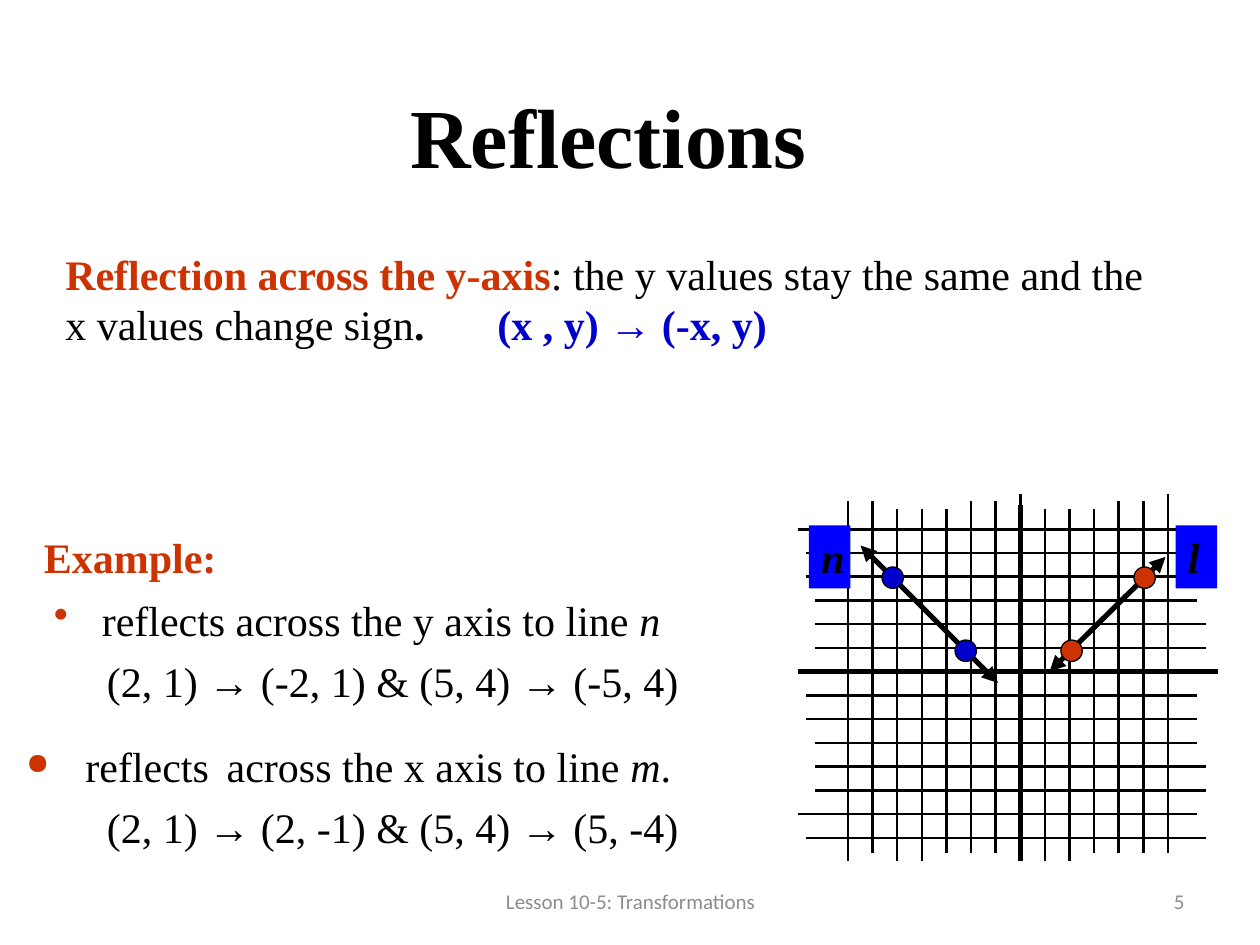
from dataclasses import dataclass

import pptx
import pptx.dml.color
import pptx.enum.shapes
import pptx.enum.text
import pptx.oxml
import pptx.oxml.ns
import pptx.util
from pptx.util import Inches


@dataclass(frozen=True)
class Theme:
    black: str = "000000"
    red: str = "CC3300"
    navy: str = "0000CC"
    blue: str = "0000FF"
    grey: str = "8C8C8C"
    serif: str = "Times New Roman"
    sans: str = "Calibri"
    title: int = 48
    body: int = 24
    gap: int = 18
    footer: int = 12


theme = Theme()
color = pptx.dml.color.RGBColor.from_string
qn = pptx.oxml.ns.qn
align = pptx.enum.text.PP_ALIGN
anchor = pptx.enum.text.MSO_ANCHOR
kinds = pptx.enum.shapes.MSO_SHAPE


def add_span(para, text, ink=theme.black, size=theme.body, font=theme.serif, bold=False, italic=False):
    span = para.add_run()
    span.text = text
    span.font.name = font
    span.font.size = pptx.util.Pt(size)
    span.font.bold = bold
    span.font.italic = italic
    span.font.color.rgb = color(ink)


def add_line(shapes, x1, y1, x2, y2, width, arrows=False):
    line = shapes.add_connector(
        pptx.enum.shapes.MSO_CONNECTOR.STRAIGHT, Inches(x1), Inches(y1), Inches(x2), Inches(y2))
    line.line.color.rgb = color(theme.black)
    line.line.width = pptx.util.Pt(width)
    if arrows:
        outline = line.line._get_or_add_ln()
        for end in ("a:headEnd", "a:tailEnd"):
            pptx.oxml.ns  # noqa
            outline.append(pptx.oxml.parse_xml(
                f'<{end} xmlns:a="http://schemas.openxmlformats.org/drawingml/2006/main" type="triangle"/>'))
    line._element.spPr.append(line._element.makeelement(qn("a:effectLst"), {}))


deck = pptx.Presentation()
deck.slide_width, deck.slide_height = Inches(10), Inches(7.5)
page = deck.slides.add_slide(deck.slide_layouts[5])

title = page.shapes.title
title.left, title.top, title.width, title.height = map(Inches, (0.33, 0.67, 9, 0.92))
title.text_frame.vertical_anchor = anchor.MIDDLE
title.text_frame.paragraphs[0].alignment = align.CENTER
title.text_frame.paragraphs[0].line_spacing = 0.85
add_span(title.text_frame.paragraphs[0], "Reflections", size=theme.title, bold=True)

for place, text, side in (
    ((3.42, 6.95, 3.17, 0.4), "Lesson 10-5: Transformations", align.CENTER),
    ((7.17, 6.95, 2.33, 0.4), "5", align.RIGHT),
):
    box = page.shapes.add_textbox(*map(Inches, place))
    box.text_frame.word_wrap = True
    box.text_frame.vertical_anchor = anchor.MIDDLE
    para = box.text_frame.paragraphs[0]
    para.alignment = side
    add_span(para, text, theme.grey, theme.footer, theme.sans)

examples = (
    ((0.33, 4.67, 6.25, 1.17), (0.38, -0.38, "•", 100),
     (("reflects across the y axis to line ", {}), ("n", {"italic": True})),
     0.42, "(2, 1) → (-2, 1) & (5, 4) → (-5, 4)"),
    ((-0.17, 5.83, 5.92, 0.98), (0.75, -0.47, "●", 70),
     (("reflects ", {}), (" ", {"size": theme.gap, "font": theme.sans}),
      ("across the x axis to line ", {}), ("m", {"italic": True}), (".", {})),
     0.92, "(2, 1) → (2, -1) & (5, 4) → (5, -4)"),
)
for place, (margin, indent, mark, percent), spans, result_margin, result in examples:
    box = page.shapes.add_textbox(*map(Inches, place))
    box.text_frame.word_wrap = True
    para = box.text_frame.paragraphs[0]
    settings = para._p.get_or_add_pPr()
    settings.set("marL", str(Inches(margin)))
    settings.set("indent", str(Inches(indent)))
    bullet_color = settings.makeelement(qn("a:buClr"), {})
    bullet_color.append(settings.makeelement(qn("a:srgbClr"), {"val": theme.red}))
    settings.append(bullet_color)
    settings.append(settings.makeelement(qn("a:buSzPct"), {"val": str(percent * 1000)}))
    settings.append(settings.makeelement(qn("a:buChar"), {"char": mark}))
    for text, style in spans:
        add_span(para, text, **style)
    para = box.text_frame.add_paragraph()
    para.space_before = pptx.util.Pt(6)
    para._p.get_or_add_pPr().set("marL", str(Inches(result_margin)))
    add_span(para, result)

grid = page.shapes.add_group_shape()
row_starts = ([6.33, 6.4, 6.4, 6.47, 6.47, 6.47] * 3)[:14]
row_ends = [9.5, 9.5, 9.5, 9.5, 9.57, 9.57] * 2 + [9.5, 9.57]
column_tops = [3.98, 3.98] + [4.04, 4.04, 4.04, 3.98, 3.98, 3.92] * 2
column_ends = [6.83, 6.77] + [6.83, 6.83, 6.77, 6.77, 6.77, 6.77] * 2
for index, (start, end) in enumerate(zip(row_starts, row_ends)):
    y = 4.2 + index * 2.45 / 13
    add_line(grid.shapes, start, y, end, y, 1.5)
for index, (start, end) in enumerate(zip(column_tops, column_ends)):
    x = 6.73 + index * 2.54 / 13
    add_line(grid.shapes, x, start, x, end, 1.5)
add_line(grid.shapes, 6.33, 5.33, 9.67, 5.33, 3)
add_line(grid.shapes, 8.1, 4.01, 8.1, 6.83, 3)

rule = page.shapes.add_textbox(*map(Inches, (0.42, 1.92, 8.83, 1.51)))
rule.text_frame.word_wrap = True
para = rule.text_frame.paragraphs[0]
tabs = para._p.get_or_add_pPr().makeelement(qn("a:tabLst"), {})
tabs.append(tabs.makeelement(qn("a:tab"), {"pos": str(Inches(3.43)), "algn": "l"}))
para._p.get_or_add_pPr().append(tabs)
add_span(para, "Reflection across the y-axis", theme.red, bold=True)
add_span(para, ": the y values stay the same and the x values change sign")
add_span(para, ".\t", bold=True)
add_span(para, "(x , y) → (-x, y)", theme.navy, bold=True)

add_line(page.shapes, 9.25, 4.42, 8.33, 5.33, 3, arrows=True)
add_line(page.shapes, 7.92, 5.42, 6.83, 4.33, 3, arrows=True)

for x, y, fill in (
    (8.42, 5.08, theme.red), (9, 4.5, theme.red), (7, 4.5, theme.navy), (7.58, 5.08, theme.navy),
):
    point = page.shapes.add_shape(kinds.OVAL, Inches(x), Inches(y), Inches(0.17), Inches(0.17))
    point.shadow.inherit = False
    point.fill.solid()
    point.fill.fore_color.rgb = color(fill)
    point.line.color.rgb = color(theme.black)
    point.line.width = pptx.util.Pt(0.75)

heading = page.shapes.add_textbox(*map(Inches, (0.25, 4.17, 1.67, 0.5)))
heading.text_frame.word_wrap = True
add_span(heading.text_frame.paragraphs[0], "Example:", theme.red, bold=True)

for x, name in ((9.33, "l"), (6.42, "n")):
    label = page.shapes.add_shape(kinds.RECTANGLE, Inches(x), Inches(4.17), Inches(0.33), Inches(0.5))
    label.shadow.inherit = False
    label.fill.solid()
    label.fill.fore_color.rgb = color(theme.blue)
    label.line.fill.background()
    label.text_frame.word_wrap = True
    label.text_frame.vertical_anchor = anchor.TOP
    para = label.text_frame.paragraphs[0]
    para.alignment = align.LEFT
    add_span(para, name, bold=True, italic=True)

deck.save("out.pptx")
